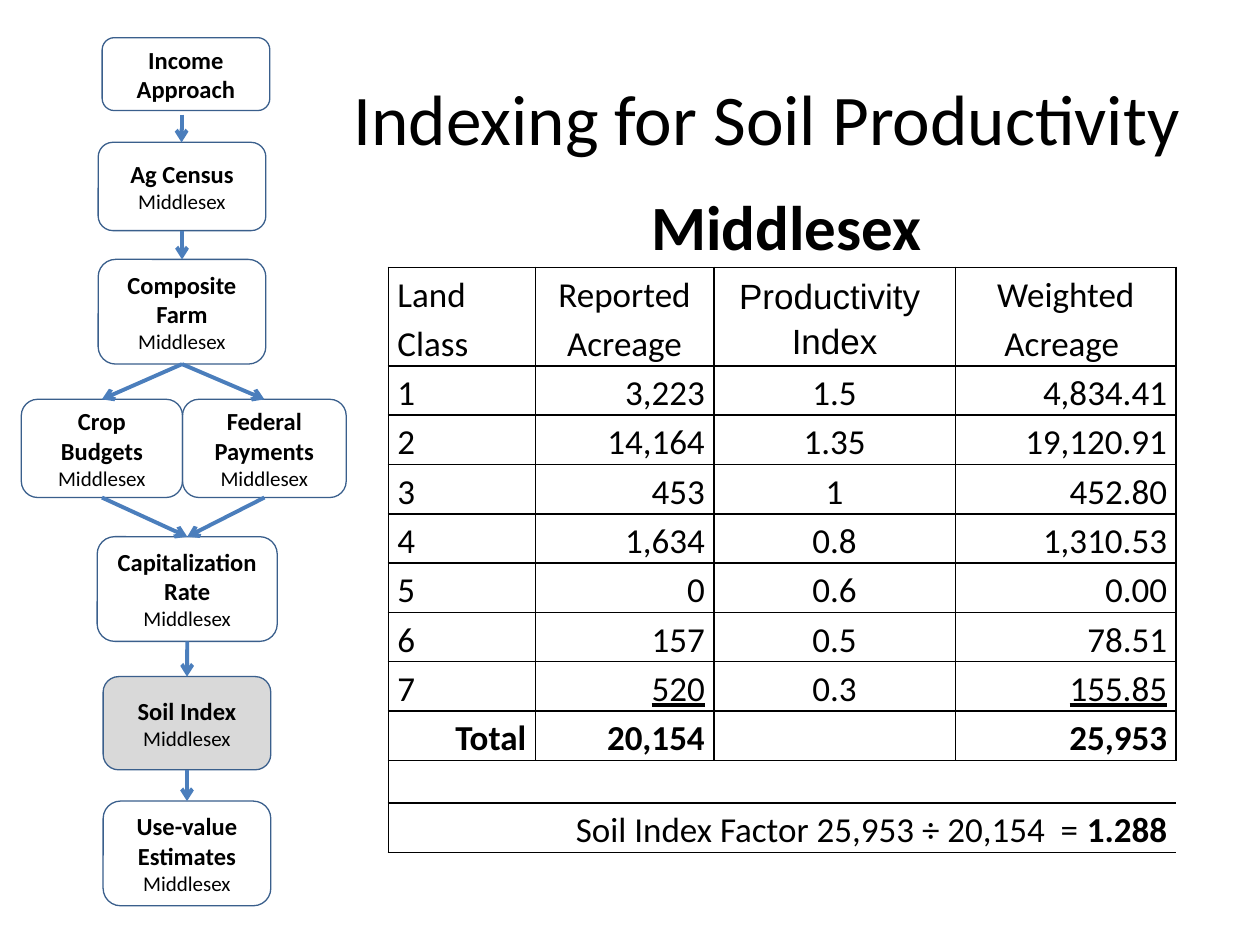
from pptx import Presentation
from pptx import util as u
from pptx.dml import color
from pptx.enum import shapes, text
from pptx.oxml import ns
from lxml import etree

LEFT, CENTER, RIGHT = text.PP_ALIGN.LEFT, text.PP_ALIGN.CENTER, text.PP_ALIGN.RIGHT
MIDDLE, TOP = text.MSO_ANCHOR.MIDDLE, text.MSO_ANCHOR.TOP


def rgb(value):
    return color.RGBColor.from_string(value)


def add_xml(parent, tag, **attributes):
    element = etree.SubElement(parent, ns.qn(tag))
    for name, value in attributes.items():
        element.set(name, value)
    return element


class SlideBuilder:
    ink, outline, arrow_color, highlight = "000000", "3A5F8C", "4B7EBC", "D9D9D9"
    box_title = {"size": u.Pt(14), "bold": True}
    box_county = {"size": u.Pt(12), "bold": False}
    cell_font = {"size": u.Pt(20), "bold": False}

    def __init__(self, presentation):
        self.slide = presentation.slides.add_slide(presentation.slide_layouts[5])

    def add_words(self, paragraph, words, values, align=CENTER):
        paragraph.alignment = align
        run = paragraph.add_run()
        run.text = words
        run.font.color.rgb = rgb(self.ink)
        for name, value in {"name": "Calibri", **values}.items():
            setattr(run.font, name, value)

    def title(self, words, left, top, width, height):
        shape = self.slide.shapes.title
        place = {"left": left, "top": top, "width": width, "height": height}
        for name, value in place.items():
            setattr(shape, name, u.Cm(value))
        shape.text_frame.vertical_anchor = MIDDLE
        self.add_words(shape.text_frame.paragraphs[0], words, {"size": u.Pt(40.7)})

    def box(self, words, left, top, width, height, county=None, fill=None):
        shape = self.slide.shapes.add_shape(
            shapes.MSO_SHAPE.FLOWCHART_ALTERNATE_PROCESS,
            *map(u.Cm, (left, top, width, height)))
        shape.shadow.inherit = False
        if fill:
            shape.fill.solid()
            shape.fill.fore_color.rgb = rgb(fill)
        else:
            shape.fill.background()
        shape.line.color.rgb = rgb(self.outline)
        shape.line.width = u.Pt(0.75)
        frame = shape.text_frame
        frame.word_wrap = True
        frame.vertical_anchor = MIDDLE
        self.add_words(frame.paragraphs[0], words, self.box_title)
        if county:
            self.add_words(frame.add_paragraph(), county, self.box_county)
        return shape

    def arrow(self, *ends):
        connector = self.slide.shapes.add_connector(
            shapes.MSO_CONNECTOR.STRAIGHT, *map(u.Cm, ends))
        connector.line.color.rgb = rgb(self.arrow_color)
        connector.line.width = u.Pt(2.25)
        outline = connector._element.spPr.find(ns.qn("a:ln"))
        add_xml(outline, "a:tailEnd", type="arrow")
        add_xml(connector._element.spPr, "a:effectLst")
        return connector

    def link(self, upper, lower):
        connector = self.arrow(0, 0, 0, 0)
        connector.begin_connect(upper, 2)
        connector.end_connect(lower, 0)

    def table(self, left, top, columns, heights):
        frame = self.slide.shapes.add_table(
            len(heights), len(columns),
            *map(u.Cm, (left, top, sum(columns), sum(heights))))
        table = frame.table
        table.first_row = table.horz_banding = False
        for column, width in zip(table.columns, columns):
            column.width = u.Cm(width)
        for row, height in zip(table.rows, heights):
            row.height = u.Cm(height)
        return table

    def borders(self, cell, sides):
        properties = cell._tc.get_or_add_tcPr()
        for side in "LRTB":
            line = add_xml(properties, f"a:ln{side}", w=str(u.Pt(1)))
            if side in sides:
                add_xml(add_xml(line, "a:solidFill"), "a:srgbClr", val=self.ink)
            else:
                add_xml(line, "a:noFill")
        cell.fill.background()

    def cell(self, cell, lines, align, anchor=TOP, **values):
        frame = cell.text_frame
        for number, words in enumerate(lines):
            paragraph = frame.add_paragraph() if number else frame.paragraphs[0]
            paragraph.line_spacing = 1.15
            self.add_words(paragraph, words, {**self.cell_font, **values}, align)
        cell.vertical_anchor = anchor


def build_flow(builder):
    county = "Middlesex"
    builder.box("Income Approach", 2.06, 0.76, 3.38, 1.47)
    census = builder.box("Ag Census", 1.98, 2.87, 3.38, 1.78, county)
    farm = builder.box("Composite Farm", 1.98, 5.23, 3.38, 2.11, county)
    crops = builder.box("Crop Budgets", 0.43, 8.05, 3.25, 1.98, county)
    payments = builder.box("Federal Payments", 3.68, 8.05, 3.3, 1.98, county)
    rate = builder.box("Capitalization Rate", 1.96, 10.82, 3.63, 2.11, county)
    soil = builder.box("Soil Index", 2.08, 13.64, 3.38, 1.88, county, builder.highlight)
    estimates = builder.box("Use-value Estimates", 2.08, 16.15, 3.38, 2.11, county)

    builder.arrow(3.66, 2.31, 3.66, 2.87)
    for upper, lower in ((census, farm), (farm, crops), (farm, payments),
                         (crops, rate), (payments, rate), (rate, soil),
                         (soil, estimates)):
        builder.link(upper, lower)


def build_table(builder):
    land_classes = [
        ("1", "3,223", "1.5", "4,834.41"),
        ("2", "14,164", "1.35", "19,120.91"),
        ("3", "453", "1", "452.80"),
        ("4", "1,634", "0.8", "1,310.53"),
        ("5", "0", "0.6", "0.00"),
        ("6", "157", "0.5", "78.51"),
        ("7", "520", "0.3", "155.85"),
    ]
    heights = [1.78, 1.98] + [0.99] * 8 + [0.86, 0.99]
    table = builder.table(7.83, 3.6, (2.96, 3.6, 4.87, 4.45), heights)
    last_row, last_column = len(heights) - 1, 3
    merged = (0, last_row - 1, last_row)

    # Borders, margins and full-width rows
    for row in range(len(heights)):
        for column in range(last_column + 1):
            cell = table.cell(row, column)
            sides = "B" if row == 0 else "TB"
            if row and (row not in merged or column == 0):
                sides += "L"
            if row and (row not in merged or column == last_column):
                sides += "R"
            builder.borders(cell, sides)
            cell.margin_left = cell.margin_right = u.Cm(0.18)
            cell.margin_top = cell.margin_bottom = 0
        if row in merged:
            table.cell(row, 0).merge(table.cell(row, last_column))

    # County heading and column heads
    heading = table.cell(0, 0)
    builder.cell(heading, ["Middlesex "], CENTER, MIDDLE, size=u.Pt(36), bold=True)
    properties = heading.text_frame.paragraphs[0]._p.get_or_add_pPr()
    properties.set("marL", str(u.Cm(1.9)))
    properties.set("indent", str(u.Cm(-1.45)))
    heads = (["Land Class"], ["Reported Acreage"], ["Productivity ", "Index"],
             ["Weighted Acreage "])
    for column, lines in enumerate(heads):
        builder.cell(table.cell(1, column), lines, CENTER if column else LEFT, MIDDLE,
                     name="Arial" if column == 2 else "Calibri")

    # Land classes, the last amounts underlined above the total
    for row, values in enumerate(land_classes, 2):
        for column, align in enumerate((LEFT, RIGHT, CENTER, RIGHT)):
            underline = values is land_classes[-1] and align == RIGHT
            builder.cell(table.cell(row, column), [values[column]], align,
                         MIDDLE if column == 2 else TOP, underline=underline)

    # Total and index factor
    for column, words in ((0, "Total"), (1, "20,154"), (3, "25,953")):
        builder.cell(table.cell(9, column), [words], RIGHT, bold=True)
    factor = table.cell(last_row, 0)
    builder.cell(factor, ["Soil Index Factor 25,953 ÷ 20,154  = "], RIGHT)
    builder.add_words(factor.text_frame.paragraphs[0], "1.288",
                      {**builder.cell_font, "bold": True}, RIGHT)


def main():
    presentation = Presentation()
    presentation.slide_width, presentation.slide_height = u.Cm(25.4), u.Cm(19.05)
    builder = SlideBuilder(presentation)
    builder.title("Indexing for Soil Productivity", 6.78, 0.76, 17.35, 3.18)
    build_flow(builder)
    build_table(builder)
    presentation.save("out.pptx")


if __name__ == "__main__":
    main()
